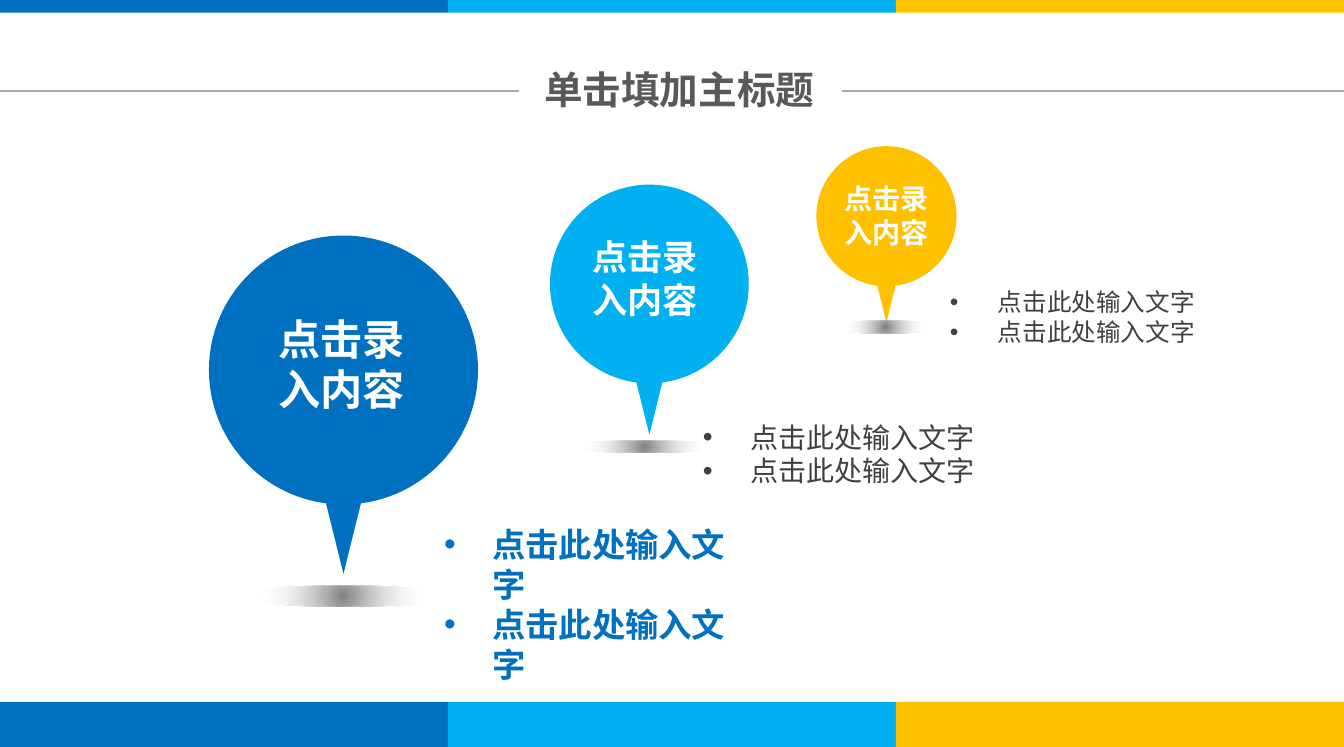
from dataclasses import dataclass
from math import asin, cos, pi, sin, tan

from lxml import etree
from pptx import Presentation
from pptx.dml.color import RGBColor
from pptx.enum.shapes import MSO_CONNECTOR, MSO_SHAPE
from pptx.enum.text import PP_ALIGN
from pptx.oxml import parse_xml
from pptx.oxml.ns import nsdecls, qn
from pptx.util import Pt

RECTANGLE = MSO_SHAPE.RECTANGLE
OVAL = MSO_SHAPE.OVAL
STRAIGHT = MSO_CONNECTOR.STRAIGHT
CENTER, LEFT = PP_ALIGN.CENTER, PP_ALIGN.LEFT


@dataclass(frozen=True)
class Theme:
    blue: str = "0070C0"
    cyan: str = "00B0F0"
    amber: str = "FFC000"
    white: str = "FFFFFF"
    body: str = "404040"
    title: str = "5A5959"
    rule: str = "A9A9A9"
    shadow: str = "808080"
    font: str = "Noto Sans CJK SC"
    title_font: str = "Arial"
    title_size: int = 22
    label_sizes: tuple = (24, 20, 16)
    list_sizes: tuple = (19, 16, 14)
    line_height: float = 1.2


theme = Theme()
WIDTH, HEIGHT = 765.36, 425.52
BULLET_INDENT = 27.36


def add_text(box, lines, size, color, bold, align=CENTER, font=theme.font, bullets=False):
    """Place a text box at box = (left, top, width, height) in points."""
    frame = slide.shapes.add_textbox(*map(Pt, box)).text_frame
    frame.word_wrap = True
    frame.text = "\n".join(lines)
    for paragraph in frame.paragraphs:
        paragraph.alignment = align
        paragraph.line_spacing = Pt(size * theme.line_height)
        if bullets:
            props = paragraph._p.get_or_add_pPr()
            props.set("marL", str(Pt(BULLET_INDENT)))
            props.set("indent", str(-Pt(BULLET_INDENT)))
            etree.SubElement(props, qn("a:buFont")).set("typeface", "Arial")
            etree.SubElement(props, qn("a:buChar")).set("char", "•")
        for run in paragraph.runs:
            run.font.size = Pt(size)
            run.font.bold = bold
            run.font.color.rgb = RGBColor.from_string(color)
            run.font.name = font
            east_asian = etree.SubElement(run._r.get_or_add_rPr(), qn("a:ea"))
            east_asian.set("typeface", theme.font)


def paint(shape, color):
    shape.shadow.inherit = False
    shape.fill.solid()
    shape.fill.fore_color.rgb = RGBColor.from_string(color)
    shape.line.fill.background()


prs = Presentation()
prs.slide_width, prs.slide_height = Pt(WIDTH), Pt(HEIGHT)
slide = prs.slides.add_slide(prs.slide_layouts[6])

# Bullet lists beside the balloons: box, colour, bold
lists = [
    ((245.9, 295, 187.2, 51.1), theme.blue, True),
    ((393.1, 235.8, 171.4, 46.1), theme.body, False),
    ((533.8, 160.2, 154.8, 41), theme.body, False),
]
for (box, color, bold), size in zip(lists, theme.list_sizes):
    add_text(box, ["点击此处输入文字"] * 2, size, color, bold, LEFT, bullets=True)

# Balloon outline in radii from the centre, clockwise from the top
tail_angle = asin(0.13)
tail_x, tail_y, tip_y = sin(tail_angle), cos(tail_angle), 1.515
upper = 4 / 3 * tan(pi / 8)  # handle length of a quarter circle
lower = 4 / 3 * tan((pi / 2 - tail_angle) / 4)
handle_x, handle_y = tail_x + lower * tail_y, tail_y - lower * tail_x
anchors = [(1, 0), (tail_x, tail_y), (0, tip_y), (-tail_x, tail_y), (-1, 0), (0, -1)]
arc_handles = {
    0: [(upper, -1), (1, -upper)],
    1: [(1, lower), (handle_x, handle_y)],
    4: [(-handle_x, handle_y), (-1, lower)],
    5: [(-1, -upper), (-upper, -1)],
}

# Balloons: colour, centre x, centre y, radius, ground shadow box, label box
balloons = [
    (theme.blue, 195.6, 210.8, 76.6, (136.1, 333.4, 118.8, 12.2), (151, 174.7, 87.1, 65.5)),
    (theme.cyan, 369.8, 161.8, 56.6, (323.3, 250.8, 87.8, 7.2), (329.8, 130.8, 74.9, 49)),
    (theme.amber, 504.8, 123.2, 39.9, (475.9, 182.9, 56.9, 7.2), (473, 99.9, 63.4, 46.1)),
]
for (color, x, y, radius, shadow_box, label_box), size in zip(balloons, theme.label_sizes):
    outline = slide.shapes.build_freeform(Pt(x), Pt(y - radius))
    outline.add_line_segments(
        [(Pt(x + radius * dx), Pt(y + radius * dy)) for dx, dy in anchors], close=True)
    balloon = outline.convert_to_shape()
    paint(balloon, color)
    segments = list(balloon._element.iter(qn("a:lnTo")))
    for index, handles in arc_handles.items():
        curve = segments[index]
        curve.tag = qn("a:cubicBezTo")
        for position, (dx, dy) in enumerate(handles):
            point = etree.Element(qn("a:pt"))
            point.set("x", str(Pt(x + radius * dx) - balloon.left))
            point.set("y", str(Pt(y + radius * dy) - balloon.top))
            curve.insert(position, point)

    ground_shadow = slide.shapes.add_shape(OVAL, *map(Pt, shadow_box))
    paint(ground_shadow, theme.shadow)
    solid = ground_shadow._element.spPr.find(qn("a:solidFill"))
    solid.getparent().replace(solid, parse_xml(
        f'<a:gradFill {nsdecls("a")} rotWithShape="1"><a:gsLst>'
        f'<a:gs pos="0"><a:srgbClr val="{theme.shadow}"/></a:gs>'
        f'<a:gs pos="80000"><a:srgbClr val="{theme.white}"><a:alpha val="0"/></a:srgbClr></a:gs>'
        '</a:gsLst><a:path path="circle">'
        '<a:fillToRect l="50000" t="50000" r="50000" b="50000"/></a:path></a:gradFill>'))

    add_text(label_box, ["点击录", "入内容"], size, theme.white, True)

# Colour bands along the top and bottom edges
band_width = WIDTH / 3
for top, height in ((0, 7.2), (399.8, 25.72)):
    for column, color in enumerate((theme.blue, theme.cyan, theme.amber)):
        band = slide.shapes.add_shape(
            RECTANGLE, Pt(column * band_width), Pt(top), Pt(band_width), Pt(height))
        paint(band, color)

# Title between two rules
add_text((269.8, 34.2, 234, 33.8), ["单击填加主标题"], theme.title_size, theme.title, True,
         font=theme.title_font)
for start, end in ((0, 295.7), (479.5, WIDTH)):
    rule = slide.shapes.add_connector(STRAIGHT, Pt(start), Pt(51.8), Pt(end), Pt(51.8))
    rule.line.color.rgb = RGBColor.from_string(theme.rule)
    rule.line.width = Pt(1)
    etree.SubElement(rule._element.spPr, qn("a:effectLst"))

prs.save("out.pptx")
